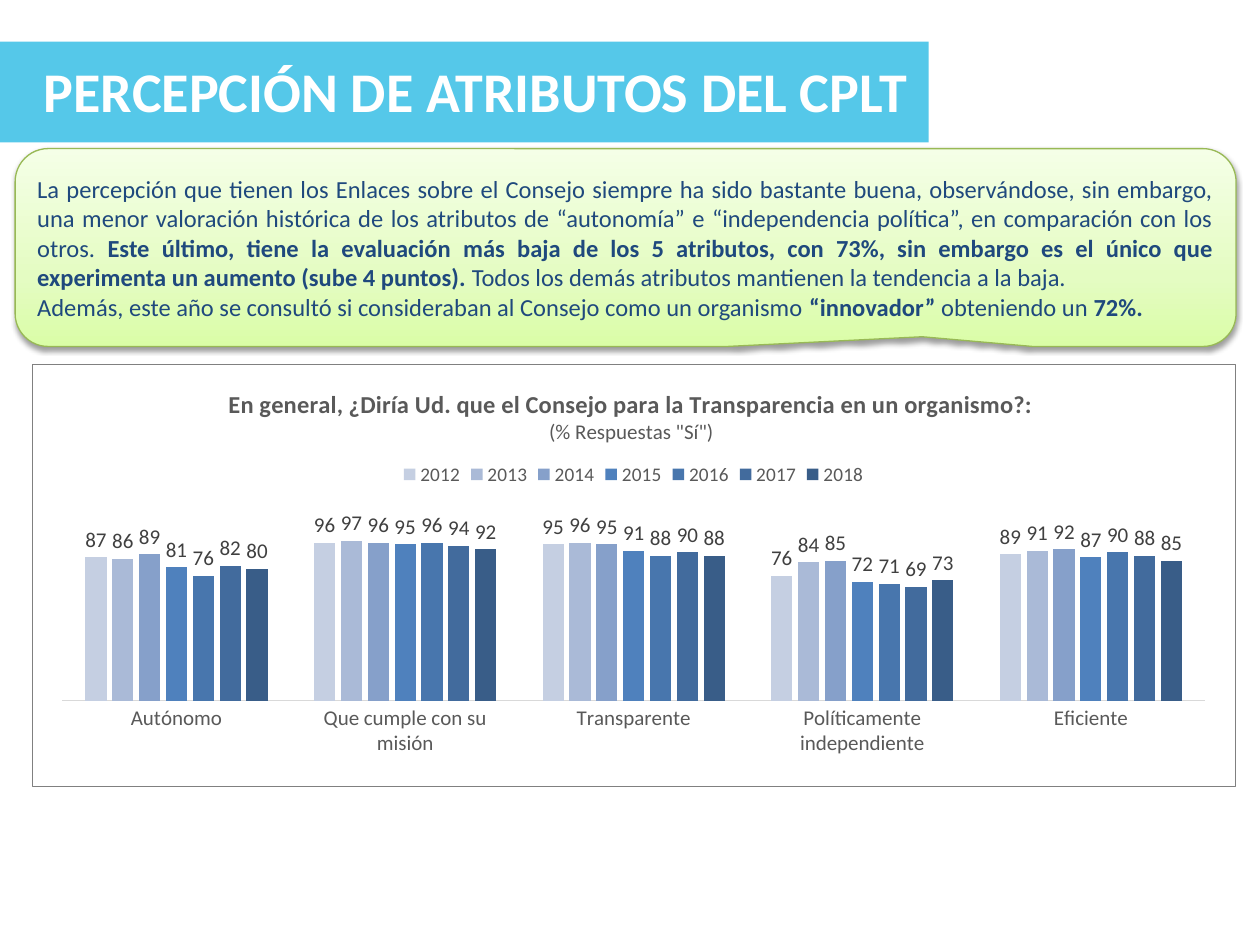
from lxml import etree
from pptx import Presentation
from pptx.chart.data import CategoryChartData
from pptx.dml.color import RGBColor
from pptx.enum.chart import XL_CHART_TYPE, XL_LABEL_POSITION, XL_LEGEND_POSITION, XL_TICK_MARK
from pptx.enum.shapes import MSO_SHAPE
from pptx.enum.text import MSO_ANCHOR, MSO_AUTO_SIZE, PP_ALIGN
from pptx.oxml import parse_xml
from pptx.oxml.ns import nsdecls, qn
from pptx.util import Inches, Pt

RECTANGLE = MSO_SHAPE.RECTANGLE
CALLOUT = MSO_SHAPE.ROUNDED_RECTANGULAR_CALLOUT
COLUMNS = XL_CHART_TYPE.COLUMN_CLUSTERED
NO_TICKS = XL_TICK_MARK.NONE

FONT = "Calibri"
WHITE = RGBColor(0xFF, 0xFF, 0xFF)
SKY = RGBColor(0x55, 0xC8, 0xE9)
NAVY = RGBColor(0x1F, 0x49, 0x7D)
GREEN = RGBColor(0x98, 0xB9, 0x55)
GRAY = RGBColor(0x59, 0x59, 0x59)
DARK_GRAY = RGBColor(0x40, 0x40, 0x40)
LIGHT_GRAY = RGBColor(0xD9, 0xD9, 0xD9)


def set_font(font, size, color, bold=None):
    font.name = FONT
    font.size = Pt(size)
    font.color.rgb = color
    font.bold = bold


def set_layout(element, index, target="", **position):
    """Place a chart part by fractions of the chart area."""
    for old in element.findall(qn("c:layout")):
        element.remove(old)
    layout = etree.Element(qn("c:layout"))
    manual = etree.SubElement(layout, qn("c:manualLayout"))
    if target:
        etree.SubElement(manual, qn("c:layoutTarget")).set("val", target)
    for key in ("x", "y"):
        etree.SubElement(manual, qn(f"c:{key}Mode")).set("val", "edge")
    for key, value in position.items():
        etree.SubElement(manual, qn(f"c:{key}")).set("val", str(value))
    element.insert(index, layout)


presentation = Presentation()
presentation.slide_width = Inches(10)
presentation.slide_height = Inches(7.5)
slide = presentation.slides.add_slide(presentation.slide_layouts[6])

# Title band
band = slide.shapes.add_shape(RECTANGLE, Inches(0), Inches(0.33), Inches(7.37), Inches(0.8))
band.shadow.inherit = False
band.fill.solid()
band.fill.fore_color.rgb = SKY
band.line.fill.background()

title_box = slide.shapes.add_textbox(Inches(0.25), Inches(0.4), Inches(7.12), Inches(0.64))
title_box.text_frame.word_wrap = False
title_box.text_frame.auto_size = MSO_AUTO_SIZE.SHAPE_TO_FIT_TEXT
paragraph = title_box.text_frame.paragraphs[0]
paragraph.text = "PERCEPCIÓN DE ATRIBUTOS DEL CPLT"
set_font(paragraph.font, 32, WHITE, True)

# Chart data
categories = ["Autónomo", "Que cumple con su misión", "Transparente",
              "Políticamente independiente", "Eficiente"]
series_rows = [
    ("2012", "C5CFE2", (87, 96, 95, 76, 89)),
    ("2013", "AABAD7", (86, 97, 96, 84, 91)),
    ("2014", "86A0CA", (89, 96, 95, 85, 92)),
    ("2015", "4F81BD", (81, 95, 91, 72, 87)),
    ("2016", "4876AD", (76, 96, 88, 71, 90)),
    ("2017", "426B9D", (82, 94, 90, 69, 88)),
    ("2018", "395D88", (80, 92, 88, 73, 85)),
]
chart_data = CategoryChartData(number_format="0")
chart_data.categories = categories
for year, _, values in series_rows:
    chart_data.add_series(year, values)
chart = slide.shapes.add_chart(
    COLUMNS, Inches(0.25), Inches(2.89), Inches(9.56), Inches(3.36), chart_data).chart
chart.font.name = FONT
chart.font.size = Pt(10)

# Chart title
chart.has_title = True
title_frame = chart.chart_title.text_frame
title_frame.text = "En general, ¿Diría Ud. que el Consejo para la Transparencia en un organismo?:"
set_font(title_frame.paragraphs[0].font, 14, GRAY, True)
subtitle = title_frame.add_paragraph()
subtitle.text = '(% Respuestas "Sí")'
set_font(subtitle.font, 12, GRAY, False)
chart.chart_title.include_in_layout = False
set_layout(chart.chart_title._element, 1, x=0.16, y=0.045)

# Legend
chart.has_legend = True
chart.legend.position = XL_LEGEND_POSITION.TOP
chart.legend.include_in_layout = False
set_font(chart.legend.font, 11, GRAY)
set_layout(chart.legend._element, 1, x=0.3, y=0.22, w=0.4, h=0.08)

# Axes
category_axis = chart.category_axis
category_axis.major_tick_mark = NO_TICKS
category_axis.format.line.color.rgb = LIGHT_GRAY
category_axis.format.line.width = Pt(0.75)
set_font(category_axis.tick_labels.font, 12, GRAY)
value_axis = chart.value_axis
value_axis.minimum_scale = 0
value_axis.maximum_scale = 100
value_axis.has_major_gridlines = False
value_axis.visible = False

# Columns and their labels
plot = chart.plots[0]
plot.vary_by_categories = False
plot.gap_width = 219
plot.overlap = -27
for series, (_, color, _) in zip(plot.series, series_rows):
    series.format.fill.solid()
    series.format.fill.fore_color.rgb = RGBColor.from_string(color)
    labels = series.data_labels
    labels.show_value = True
    labels.number_format = "0"
    labels.number_format_is_linked = False
    labels.position = XL_LABEL_POSITION.OUTSIDE_END
    set_font(labels.font, 12, DARK_GRAY)

# Plot position and chart border
chart_element = chart._chartSpace.find(qn("c:chart"))
set_layout(chart_element.find(qn("c:plotArea")), 0, "inner", x=0.025, y=0.406, w=0.95, h=0.39)
chart_element.addnext(parse_xml(
    f'<c:spPr {nsdecls("c", "a")}><a:solidFill><a:srgbClr val="FFFFFF"/></a:solidFill>'
    '<a:ln w="9525"><a:solidFill><a:srgbClr val="808080"/></a:solidFill></a:ln></c:spPr>'))

# Callout with gradient and shadow
callout = slide.shapes.add_shape(CALLOUT, Inches(0.12), Inches(1.18), Inches(9.69), Inches(1.57))
for index, value in enumerate((0.243, 0.451, 0.167)):
    callout.adjustments[index] = value
callout.line.color.rgb = GREEN
callout.line.width = Pt(0.75)
callout.fill.gradient()
callout.fill.gradient_angle = 90
stops = callout._element.spPr.find(f'{qn("a:gradFill")}/{qn("a:gsLst")}')
for stop in list(stops):
    stops.remove(stop)
for position, color in ((0, "DAFDA7"), (35, "E4FCC2"), (100, "F5FFE7")):
    stops.append(parse_xml(f'<a:gs {nsdecls("a")} pos="{position * 1000}">'
                           f'<a:srgbClr val="{color}"/></a:gs>'))
callout.shadow.inherit = False
callout._element.spPr.find(qn("a:effectLst")).append(parse_xml(
    f'<a:outerShdw {nsdecls("a")} blurRad="40000" dist="20000" dir="5400000" rotWithShape="0">'
    '<a:srgbClr val="000000"><a:alpha val="38000"/></a:srgbClr></a:outerShdw>'))

# Callout text: runs with their weight
callout_paragraphs = [
    [("La percepción que tienen los Enlaces sobre el Consejo siempre ha sido bastante buena, "
      "observándose, sin embargo, una menor valoración histórica de los atributos de “autonomía” "
      "e “independencia política”, en comparación con los otros. ", False),
     ("Este último, tiene la evaluación más baja de los 5 atributos, con 73%, sin embargo es el "
      "único que experimenta un aumento (sube 4 puntos). ", True),
     ("Todos los demás atributos mantienen la tendencia a la baja.", False)],
    [("Además, este año se consultó si consideraban al Consejo como un organismo ", False),
     ("“innovador” ", True), ("obteniendo un ", False), ("72%.", True)],
]
text_frame = callout.text_frame
text_frame.word_wrap = True
text_frame.vertical_anchor = MSO_ANCHOR.MIDDLE
for index, runs in enumerate(callout_paragraphs):
    paragraph = text_frame.add_paragraph() if index else text_frame.paragraphs[0]
    paragraph.alignment = PP_ALIGN.JUSTIFY
    for text, bold in runs:
        run = paragraph.add_run()
        run.text = text
        set_font(run.font, 14, NAVY, bold)

presentation.save("out.pptx")
